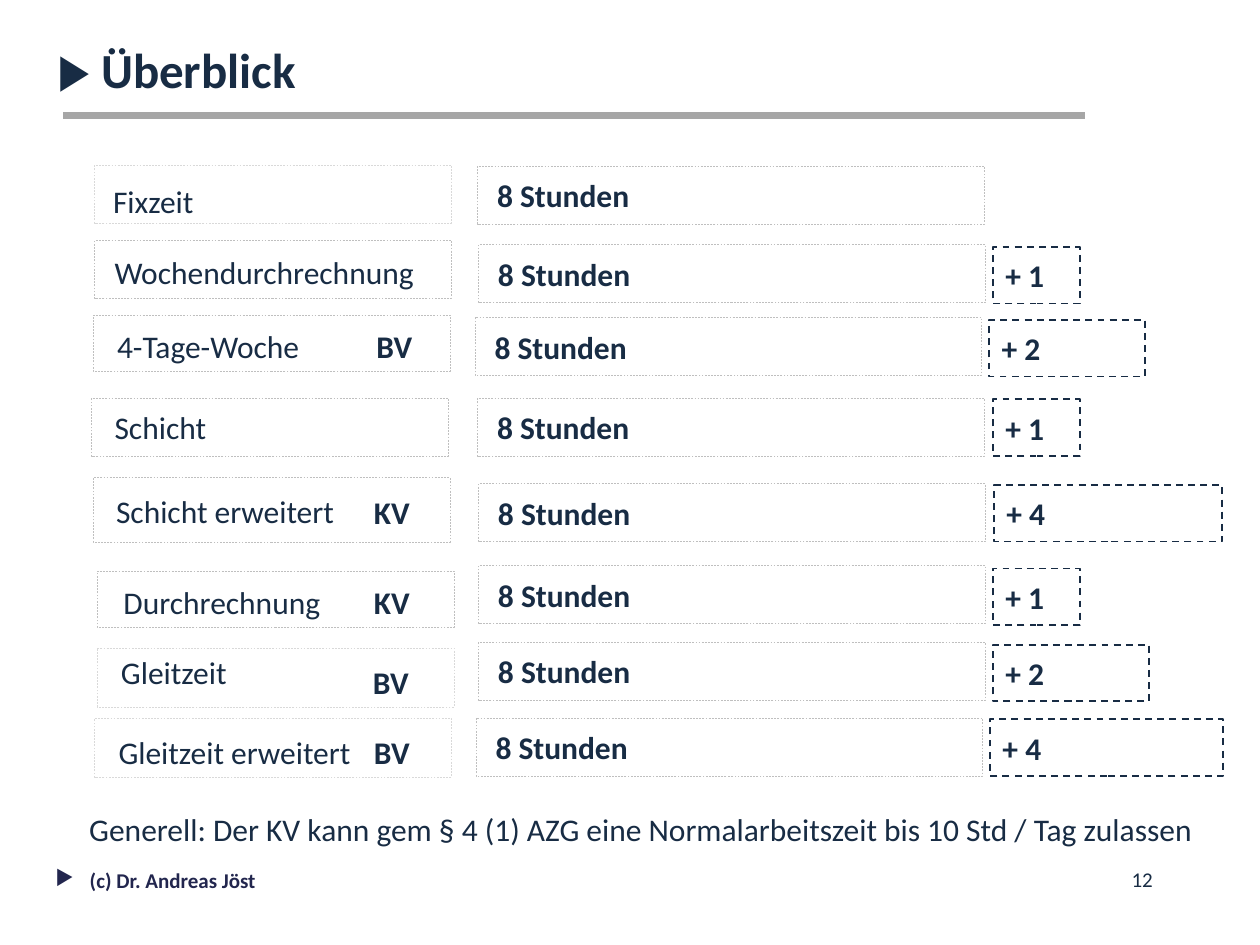
"""Build the working-time overview slide."""
from lxml import etree
from pptx import Presentation
from pptx.dml.color import RGBColor
from pptx.enum.dml import MSO_LINE
from pptx.enum.shapes import MSO_CONNECTOR, MSO_SHAPE
from pptx.enum.text import MSO_ANCHOR, MSO_AUTO_SIZE, PP_ALIGN
from pptx.oxml.ns import qn
from pptx.util import Cm, Pt

NAVY = RGBColor(0x18, 0x2C, 0x44)
INDIGO = RGBColor(0x22, 0x26, 0x4E)
RULE = RGBColor(0xA6, 0xA6, 0xA6)
GREY = RGBColor(0xBF, 0xBF, 0xBF)
LIGHT = RGBColor(0xD9, 0xD9, 0xD9)


def write(sp, text, size=18, bold=False, color=NAVY, align=PP_ALIGN.LEFT, inset=None):
    tf = sp.text_frame
    tf.word_wrap = True
    if inset is not None:
        tf.margin_left, tf.margin_right = Cm(inset), Cm(0.1)
        tf.margin_top = tf.margin_bottom = Cm(0.05)
    p = tf.paragraphs[0]
    p.text = text
    p.alignment = align
    font = p.runs[0].font
    font.name, font.size, font.bold = "Calibri", Pt(size), bold
    font.color.rgb = color
    return tf


def add_box(shapes, x, y, w, h, color, weight, text=None, inset=0.1):
    sp = shapes.add_shape(MSO_SHAPE.RECTANGLE, Cm(x), Cm(y), Cm(w), Cm(h))
    sp.shadow.inherit = False
    sp.fill.background()
    sp.line.color.rgb = color
    sp.line.width = Pt(weight)
    sp.line.dash_style = MSO_LINE.DASH
    if text:
        write(sp, text, bold=True, inset=inset).vertical_anchor = MSO_ANCHOR.MIDDLE


prs = Presentation()
prs.slide_width, prs.slide_height = Cm(25.4), Cm(19.05)
s = prs.slides.add_slide(prs.slide_layouts[5])

title = s.shapes.title
title.left, title.top, title.width, title.height = Cm(0.91), Cm(0.3), Cm(20.6), Cm(1.8)
tf = write(title, "▶ Überblick", size=28, bold=True)
tf.vertical_anchor = MSO_ANCHOR.BOTTOM
tf.auto_size = MSO_AUTO_SIZE.NONE

rule = s.shapes.add_connector(MSO_CONNECTOR.STRAIGHT, Cm(1.27), Cm(2.33), Cm(21.87), Cm(2.33))
rule.line.color.rgb = RULE
rule.line.width = Pt(4)
etree.SubElement(rule.element.spPr, qn("a:effectLst"))

rows = [
    (("Fixzeit", 2.18, 3.61, 4.32), (1.91, 3.33, 1.17, LIGHT), (9.63, 3.35), None, None),
    (("Wochendurchrechnung", 2.21, 5.05, 7.19), (1.91, 4.85, 1.17, GREY), (9.65, 4.93),
     None, ("+ 1", 20.02, 4.98, 1.75)),
    (("4-Tage-Woche", 2.26, 6.55, 4.67), (1.88, 6.35, 1.14, GREY), (9.58, 6.4),
     ("BV", 7.49, 6.55), ("+ 2", 19.94, 6.45, 3.15)),
    (("Schicht", 2.21, 8.18, 4.01), (1.85, 8.03, 1.17, GREY), (9.63, 8.03),
     None, ("+ 1", 20.02, 8.05, 1.75)),
    (("Schicht erweitert", 2.24, 9.86, 6.25), (1.88, 9.63, 1.3, GREY), (9.65, 9.75),
     ("KV", 7.44, 9.88), ("+ 4", 20.04, 9.78, 4.6)),
    (("Durchrechnung", 2.39, 11.71, 6.17), (1.96, 11.51, 1.14, GREY), (9.65, 11.4),
     ("KV", 7.44, 11.71), ("+ 1", 20.02, 11.46, 1.75)),
    (("Gleitzeit", 2.34, 13.11, 2.62), (1.96, 13.06, 1.19, LIGHT), (9.65, 12.95),
     ("BV", 7.42, 13.31), ("+ 2", 20.02, 13.0, 3.15)),
    (("Gleitzeit erweitert", 2.29, 14.73, 5.82), (1.91, 14.48, 1.19, LIGHT), (9.6, 14.48),
     ("BV", 7.44, 14.73), ("+ 4", 19.96, 14.5, 4.7)),
]

for label, frame, hours, basis, extra in rows:
    shapes = s.shapes.add_group_shape().shapes
    if extra:
        text, x, y, w = extra
        add_box(shapes, x, y, w, 1.14, NAVY, 1, text, inset=0.25)
    x, y, h, color = frame
    add_box(shapes, x, y, 7.19, h, color, 0.25)
    add_box(shapes, *hours, 10.21, 1.17, GREY, 0.25, "8 Stunden", inset=0.39)
    captions = [(*label, False)]
    if basis:
        captions.append((*basis, 1.27, True))
    for text, x, y, w, bold in captions:
        sp = shapes.add_textbox(Cm(x), Cm(y), Cm(w), Cm(0.86))
        write(sp, text, bold=bold, inset=0.1).auto_size = MSO_AUTO_SIZE.SHAPE_TO_FIT_TEXT

note = s.shapes.add_textbox(Cm(1.7), Cm(16.28), Cm(22.63), Cm(0.86))
tf = write(note, "Generell: Der KV kann gem § 4 (1) AZG eine Normalarbeitszeit bis 10 Std / Tag zulassen",
           inset=0.1)
tf.auto_size = MSO_AUTO_SIZE.SHAPE_TO_FIT_TEXT

author = s.shapes.add_textbox(Cm(0.74), Cm(17.12), Cm(5.0), Cm(1.27))
tf = write(author, " (c) Dr. Andreas Jöst", size=12, bold=True, color=INDIGO, align=PP_ALIGN.CENTER)
p = tf.paragraphs[0]
p.line_spacing = 1.5
etree.SubElement(p._p.get_or_add_pPr(), qn("a:buChar")).set("char", "▶")

number = s.shapes.add_textbox(Cm(18.21), Cm(17.35), Cm(5.28), Cm(1.27))
write(number, "12", size=12, align=PP_ALIGN.RIGHT)

prs.save("out.pptx")
